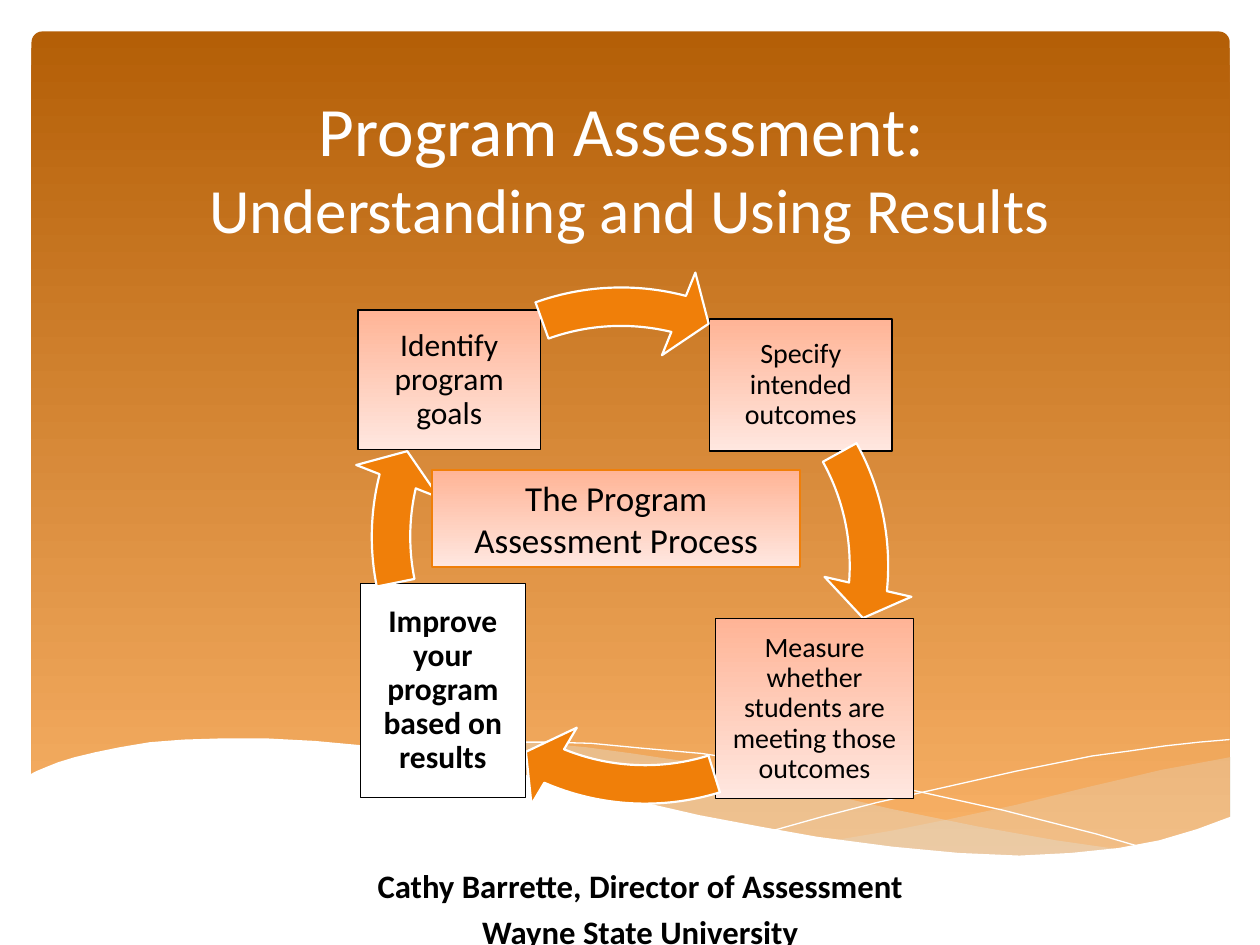
import pptx
import pptx.dml.color
import pptx.enum.shapes
import pptx.enum.text
import pptx.oxml
import pptx.util

Pt = pptx.util.Pt
AUTO_SHAPE = pptx.enum.shapes.MSO_SHAPE
ANCHOR = pptx.enum.text.MSO_ANCHOR
PEACH = ("FFB496", "FFE7E0")


def paint(shape, fill=None, line=None, width=0, alpha=None):
    """Fill with nothing, one hex colour or a (top, bottom) gradient, then set the outline."""
    shape.shadow.inherit = False
    if fill is None:
        shape.fill.background()
    elif isinstance(fill, tuple):
        shape.fill.gradient()
        shape.fill.gradient_angle = 270
        for stop, colour in zip(shape.fill.gradient_stops, fill):
            stop.color.rgb = pptx.dml.color.RGBColor.from_string(colour)
    else:
        shape.fill.solid()
        shape.fill.fore_color.rgb = pptx.dml.color.RGBColor.from_string(fill)
    if alpha:
        opacity = pptx.oxml.parse_xml(
            '<a:alpha xmlns:a="http://schemas.openxmlformats.org/drawingml/2006/main"'
            f' val="{alpha * 1000}"/>')
        shape.fill._xPr.solidFill[0].append(opacity)
    if line is None:
        shape.line.fill.background()
    else:
        shape.line.color.rgb = pptx.dml.color.RGBColor.from_string(line)
        shape.line.width = Pt(width)


def write(shape, lines, size, colour="000000", bold=False, spacing=1.0, before=0, **frame_format):
    """Write centred lines, one paragraph each; frame_format goes to the text frame."""
    frame = shape.text_frame
    frame.word_wrap = True
    for name, value in frame_format.items():
        setattr(frame, name, value)
    for index, text in enumerate(lines):
        paragraph = frame.add_paragraph() if index else frame.paragraphs[0]
        paragraph.alignment = pptx.enum.text.PP_ALIGN.CENTER
        paragraph.line_spacing = spacing
        if index:
            paragraph.space_before = Pt(before)
        run = paragraph.add_run()
        run.text = text
        run_format = {"name": "Calibri", "size": Pt(size), "bold": bold}
        for name, value in run_format.items():
            setattr(run.font, name, value)
        run.font.color.rgb = pptx.dml.color.RGBColor.from_string(colour)


presentation = pptx.Presentation()
presentation.slide_width, presentation.slide_height = Pt(720), Pt(540)
slide = presentation.slides.add_slide(presentation.slide_layouts[6])
shapes = slide.shapes

# Backdrop
backdrop = shapes.add_shape(AUTO_SHAPE.ROUNDED_RECTANGLE, Pt(18), Pt(18), Pt(684.7), Pt(475.2))
backdrop.adjustments[0] = 0.013
paint(backdrop, ("B45F07", "F9B268"))

# Waves: outline in points, closed or not, format
right_haze = [
    (702.7, 432.7), (683.6, 436.3), (663.8, 439.9), (642.2, 445), (620.6, 450), (580.3, 460),
    (542.9, 468), (509, 474.8), (476.6, 480.2), (508.3, 484.6), (537, 487.4), (563, 489),
    (586.8, 489.6), (608.4, 488.9), (628.6, 487.4), (646.6, 483.8), (663.8, 480.2),
    (679.7, 475.9), (694.1, 470.9), (703.4, 467.3), (703.4, 432.7)]
wide_haze = [
    (643.7, 486), (603.4, 480.2), (558.7, 472.3), (509, 462.2), (453.6, 449.3), (420.5, 441.4),
    (390.2, 434.9), (361.4, 430.6), (334.8, 427), (302.4, 424.1), (273.6, 422.6),
    (248.4, 423.4), (226.1, 424.8), (206.6, 427), (232.6, 430.6), (261.4, 434.9),
    (291.6, 441.4), (324, 449.3), (381.6, 462.2), (433.4, 473), (468.7, 479.5),
    (501.1, 483.8), (530.6, 487.4), (557.3, 488.9), (581.8, 489.6), (604.1, 489.6),
    (624.9, 488.2)]
falling_curve = [
    (223.2, 429.8), (236.9, 427.7), (254.2, 425.5), (270, 424.8), (289.4, 424.1),
    (311.8, 424.1), (337.7, 424.8), (367.9, 427.7), (401, 430.6), (438.5, 436.3),
    (479.5, 442.8), (524.2, 452.2), (573.1, 463), (626.4, 476.6), (653.8, 484.6)]
rising_curve = [
    (442.1, 474.5), (470.2, 466.6), (501.1, 458.6), (539.3, 450), (581, 440.6), (624.2, 432),
    (645.8, 429.1), (666, 426.2), (685.4, 424.1), (702.7, 422.6)]
white_wave = [
    (703.4, 466.6), (684, 473.8), (662.4, 480.2), (639, 484.6), (612, 487.4), (582.5, 488.9),
    (547.9, 487.4), (509.8, 483.8), (466.6, 478.1), (434.2, 472.3), (399.6, 465.8),
    (362.2, 457.2), (321.8, 447.8), (281.5, 438.5), (244.8, 431.3), (210.2, 426.2),
    (180, 423.4), (151.9, 421.9), (127.4, 421.9), (105.1, 422.6), (85.7, 424.1), (68.4, 427),
    (54.7, 429.8), (42.5, 432.7), (33.1, 435.6), (25.9, 438.5), (20.9, 440.6), (16.6, 442.8),
    (16.6, 526.3), (703.4, 526.3)]
waves = [
    (right_haze, True, {"fill": "E3DED1", "alpha": 29}),
    (wide_haze, True, {"fill": "E3DED1", "alpha": 40}),
    (falling_curve, False, {"line": "FFFFFF"}),
    (rising_curve, False, {"line": "FFFFFF"}),
    (white_wave, True, {"fill": "FFFFFF"}),
]
for outline, closed, wave_format in waves:
    start, *rest = [(Pt(x), Pt(y)) for x, y in outline]
    builder = shapes.build_freeform(*start)
    builder.add_line_segments(rest, close=closed)
    paint(builder.convert_to_shape(), **wave_format)

# Title
title = shapes.add_textbox(Pt(23.8), Pt(41.8), Pt(671.8), Pt(102.2))
write(title, ["Program Assessment: "], 39.6, "FFFFFF", vertical_anchor=ANCHOR.BOTTOM)
heading = title.text_frame.paragraphs[0]
heading.add_line_break()
subheading = heading.add_run()
subheading.text = "Understanding and Using Results"
for name, value in {"name": "Calibri", "size": Pt(36)}.items():
    setattr(subheading.font, name, value)
subheading.font.color.rgb = pptx.dml.color.RGBColor.from_string("FFFFFF")

# Process cycle: step box, text, size, bold, fill, then the arrow's corner, end and start angle
# (angles in the units of the adjustments, 0.6 to the degree)
steps = [
    ((405.4, 182.2, 104.4, 75.6), "Specify intended outcomes", 16, False, PEACH,
     (203.8, 164.2), 3.1, 198.62),
    ((409, 353.5, 113, 103), "Measure whether students are meeting those outcomes", 16, False,
     PEACH, (209.5, 155.5), 67.72, 43.68),
    ((205.9, 333.4, 94.3, 122.4), "Improve your program based on results", 18, True, "FFFFFF",
     (198, 147.6), 116.22, 101.18),
    ((204.5, 177.1, 104.4, 79.9), "Identify program goals", 18, False, PEACH,
     (195.8, 149.8), 170.56, 150.15),
]
margins = dict.fromkeys(("margin_left", "margin_top", "margin_right", "margin_bottom"), Pt(1.8))
for box, text, size, bold, fill, corner, end, start in steps:
    step = shapes.add_shape(AUTO_SHAPE.RECTANGLE, *map(Pt, box))
    paint(step, fill, "000000", 0.75)
    write(step, [text], size, bold=bold, spacing=0.9, vertical_anchor=ANCHOR.MIDDLE, **margins)
    arrow = shapes.add_shape(AUTO_SHAPE.CIRCULAR_ARROW, *map(Pt, corner), Pt(318.2), Pt(318.2))
    for index, value in enumerate((0.069, 4.65, end, start, 0.08)):
        arrow.adjustments[index] = value
    paint(arrow, "F07F09", "FFFFFF", 1.25)

# Presenter
presenter = shapes.add_textbox(Pt(167.8), Pt(473.8), Pt(396), Pt(66.2))
write(presenter, ["Cathy Barrette, Director of Assessment", "Wayne State University"], 18.7,
      bold=True, before=3.7, margin_top=Pt(21))

# Cycle caption
caption = shapes.add_shape(AUTO_SHAPE.RECTANGLE, Pt(247), Pt(268.6), Pt(210.2), Pt(55.4))
paint(caption, PEACH, "F07F09", 1.25)
write(caption, ["The Program Assessment Process"], 20, vertical_anchor=ANCHOR.TOP)

presentation.save("out.pptx")
